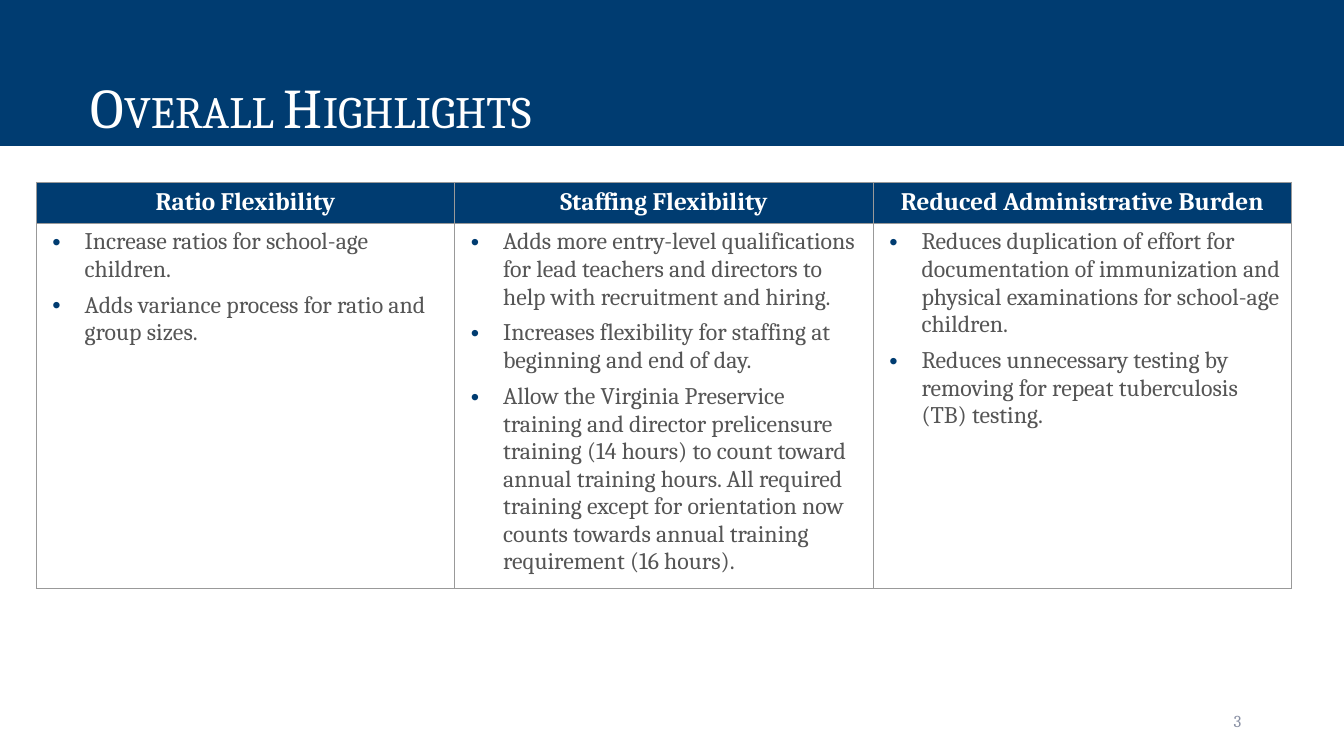
from dataclasses import dataclass

import pptx
import pptx.dml.color
import pptx.enum.shapes
import pptx.enum.text
import pptx.oxml
import pptx.oxml.ns
import pptx.util

RGBColor = pptx.dml.color.RGBColor
Inches = pptx.util.Inches
Pt = pptx.util.Pt
Align = pptx.enum.text.PP_ALIGN
Anchor = pptx.enum.text.MSO_ANCHOR

NAVY = RGBColor(0x00, 0x3C, 0x71)
WHITE = RGBColor(0xFF, 0xFF, 0xFF)
BODY_GRAY = RGBColor(0x55, 0x55, 0x55)
BORDER_GRAY = RGBColor(0x99, 0x99, 0x99)
NUMBER_GRAY = RGBColor(0x88, 0x8F, 0xA3)
FONT = "Cambria"

SLIDE_WIDTH = Inches(13.33)
SLIDE_HEIGHT = Inches(7.5)
BORDER_WIDTH = Pt(0.5)
HEADER_ROW, BODY_ROW = 5.45, 47.2  # percent of the slide height


@dataclass(frozen=True)
class Area:
    """A rectangle in percent of the slide's width and height."""
    left: float
    top: float
    width: float
    height: float

    def lengths(self) -> tuple[int, int, int, int]:
        return (across(self.left), down(self.top), across(self.width), down(self.height))


@dataclass(frozen=True)
class Highlight:
    heading: str
    points: tuple[str, ...]


TITLE_BAND = Area(0, 0, 100, 19.3)
TABLE_AREA = Area(2.7, 24.1, 93.4, HEADER_ROW + BODY_ROW)
NUMBER_AREA = Area(70.6, 92.65, 22.5, 5.33)

HIGHLIGHTS = (
    Highlight("Ratio Flexibility", (
        "Increase ratios for school-age children.",
        "Adds variance process for ratio and group sizes.",
    )),
    Highlight("Staffing Flexibility", (
        "Adds more entry-level qualifications for lead teachers and directors to help "
        "with recruitment and hiring.",
        "Increases flexibility for staffing at beginning and end of day.",
        "Allow the Virginia Preservice training and director prelicensure training "
        "(14 hours) to count toward annual training hours. All required training except "
        "for orientation now counts towards annual training requirement (16 hours).",
    )),
    Highlight("Reduced Administrative Burden", (
        "Reduces duplication of effort for documentation of immunization and physical "
        "examinations for school-age children.",
        "Reduces unnecessary testing by removing for repeat tuberculosis (TB) testing.",
    )),
)


def across(percent: float) -> int:
    return round(SLIDE_WIDTH * percent / 100)


def down(percent: float) -> int:
    return round(SLIDE_HEIGHT * percent / 100)


def format_paragraph(paragraph, size: float, color: RGBColor, alignment, bold: bool = False) -> None:
    paragraph.alignment = alignment
    for run in paragraph.runs:
        run.font.name = FONT
        run.font.size = Pt(size)
        run.font.bold = bold
        run.font.color.rgb = color


def add_bullet(paragraph) -> None:
    properties = paragraph._p.get_or_add_pPr()
    properties.set("marL", str(Inches(0.38)))
    properties.set("indent", str(Inches(-0.32)))
    namespace = pptx.oxml.ns.nsdecls("a")
    for xml in (
        f'<a:buClr {namespace}><a:srgbClr val="{NAVY}"/></a:buClr>',
        f'<a:buFont {namespace} typeface="Arial"/>',
        f'<a:buChar {namespace} char="•"/>',
    ):
        properties.append(pptx.oxml.parse_xml(xml))


def add_borders(cell) -> None:
    properties = cell._tc.get_or_add_tcPr()
    for index, side in enumerate(("lnL", "lnR", "lnT", "lnB")):
        properties.insert(index, pptx.oxml.parse_xml(
            f'<a:{side} {pptx.oxml.ns.nsdecls("a")} w="{BORDER_WIDTH}">'
            f'<a:solidFill><a:srgbClr val="{BORDER_GRAY}"/></a:solidFill></a:{side}>'))


def add_title(slide, text: str) -> None:
    band = slide.shapes.add_shape(
        pptx.enum.shapes.MSO_SHAPE.RECTANGLE, *TITLE_BAND.lengths())
    band.shadow.inherit = False
    band.fill.solid()
    band.fill.fore_color.rgb = NAVY
    band.line.fill.background()
    frame = band.text_frame
    frame.text = text
    frame.word_wrap = True
    frame.vertical_anchor = Anchor.BOTTOM
    frame.margin_left = Inches(0.9)
    paragraph = frame.paragraphs[0]
    paragraph.line_spacing = 0.9
    format_paragraph(paragraph, 40, WHITE, Align.LEFT)
    paragraph.runs[0].font._element.set("cap", "small")


def add_slide_number(slide, text: str) -> None:
    box = slide.shapes.add_textbox(*NUMBER_AREA.lengths())
    frame = box.text_frame
    frame.text = text
    frame.word_wrap = True
    frame.vertical_anchor = Anchor.MIDDLE
    format_paragraph(frame.paragraphs[0], 12, NUMBER_GRAY, Align.RIGHT)


def fill_cell(cell, color: RGBColor) -> None:
    cell.fill.solid()
    cell.fill.fore_color.rgb = color
    add_borders(cell)


def fill_header(cell, heading: str) -> None:
    cell.text_frame.text = heading
    cell.vertical_anchor = Anchor.MIDDLE
    format_paragraph(cell.text_frame.paragraphs[0], 18, WHITE, Align.CENTER, bold=True)
    fill_cell(cell, NAVY)


def fill_body(cell, points: tuple[str, ...]) -> None:
    cell.text_frame.text = "\n".join(points)
    cell.margin_bottom = 0
    paragraphs = cell.text_frame.paragraphs
    for paragraph in paragraphs:
        paragraph.space_after = Pt(6)
        format_paragraph(paragraph, 17, BODY_GRAY, Align.LEFT)
        add_bullet(paragraph)
    paragraphs[-1].space_after = Pt(0)
    fill_cell(cell, WHITE)


def add_highlights_table(slide, highlights: tuple[Highlight, ...]) -> None:
    frame = slide.shapes.add_table(2, len(highlights), *TABLE_AREA.lengths())
    table = frame.table
    table.horz_banding = False
    for row, height in zip(table.rows, (HEADER_ROW, BODY_ROW)):
        row.height = down(height)
    for column, highlight in enumerate(highlights):
        fill_header(table.cell(0, column), highlight.heading)
        fill_body(table.cell(1, column), highlight.points)


def main() -> None:
    presentation = pptx.Presentation()
    presentation.slide_width = SLIDE_WIDTH
    presentation.slide_height = SLIDE_HEIGHT
    slide = presentation.slides.add_slide(presentation.slide_layouts[6])
    add_title(slide, "Overall Highlights")
    add_slide_number(slide, "3")
    add_highlights_table(slide, HIGHLIGHTS)
    presentation.save("out.pptx")


if __name__ == "__main__":
    main()
